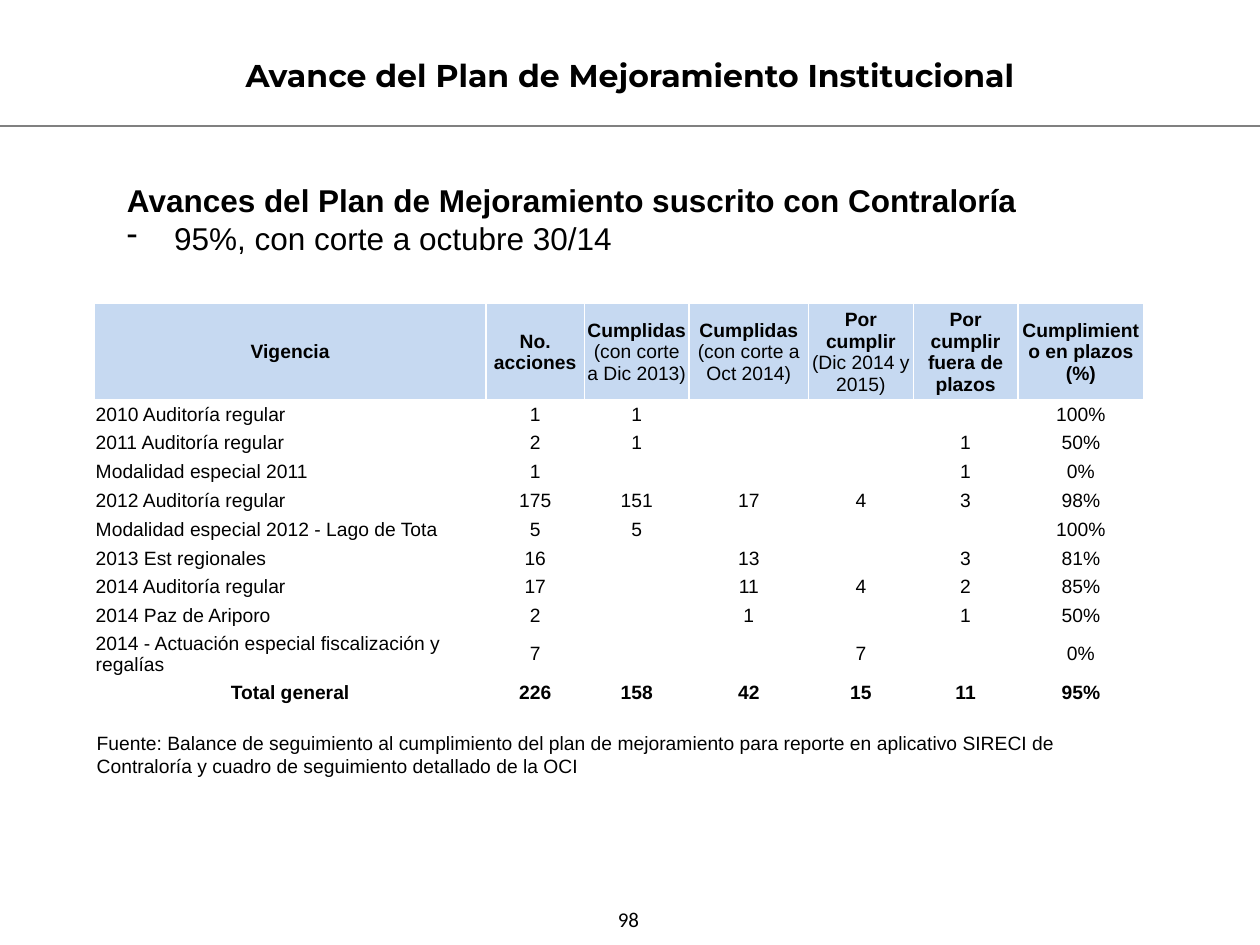
"""Build the slide on the progress of the institutional improvement plan."""
from lxml.etree import SubElement
from pptx import Presentation
from pptx.dml.color import RGBColor
from pptx.enum.shapes import MSO_CONNECTOR
from pptx.enum.text import MSO_ANCHOR as Anchor, PP_ALIGN as Align
from pptx.oxml.ns import qn
from pptx.util import Cm, Pt

BLACK = RGBColor(0x00, 0x00, 0x00)
WHITE = RGBColor(0xFF, 0xFF, 0xFF)
GREY = RGBColor(0x80, 0x80, 0x80)
PALE_BLUE = RGBColor(0xC6, 0xD9, 0xF1)

TITLE = "Avance del Plan de Mejoramiento Institucional"
HEADLINE = "Avances del Plan de Mejoramiento suscrito con Contraloría"
PROGRESS = "95%, con corte a octubre 30/14"
SOURCE = ("Fuente: Balance de seguimiento al cumplimiento del plan de mejoramiento para reporte "
          "en aplicativo SIRECI de Contraloría y cuadro de seguimiento detallado de la OCI")
PAGE_NUMBER = "98"

COLUMNS = [
    ("Vigencia", "", 7.9),
    ("No. acciones", "", 1.98),
    ("Cumplidas ", "(con corte a Dic 2013)", 2.11),
    ("Cumplidas ", "(con corte a Oct 2014)", 2.41),
    ("Por cumplir ", "(Dic 2014 y 2015)", 2.11),
    ("Por cumplir fuera de plazos", "", 2.11),
    ("Cumplimiento en plazos (%)", "", 2.54),
]
AUDITS = [
    ("2010 Auditoría regular", "1", "1", "", "", "", "100%"),
    ("2011 Auditoría regular", "2", "1", "", "", "1", "50%"),
    ("Modalidad especial 2011", "1", "", "", "", "1", "0%"),
    ("2012 Auditoría regular", "175", "151", "17", "4", "3", "98%"),
    ("Modalidad especial 2012 - Lago de Tota", "5", "5", "", "", "", "100%"),
    ("2013 Est regionales", "16", "", "13", "", "3", "81%"),
    ("2014 Auditoría regular", "17", "", "11", "4", "2", "85%"),
    ("2014 Paz de Ariporo", "2", "", "1", "", "1", "50%"),
    ("2014 - Actuación especial fiscalización y regalías", "7", "", "", "7", "", "0%"),
]
TOTAL = ("Total general", "226", "158", "42", "15", "11", "95%")
HEADER_HEIGHT, ROW_HEIGHT = 1.93, 0.58


def write(paragraph, text, *, size=11, font="Arial", bold=False, align=Align.LEFT):
    paragraph.alignment = align
    if not text:
        SubElement(paragraph._p, qn("a:endParaRPr"), sz=str(size * 100))
        return
    run = paragraph.add_run()
    run.text = text
    run.font.size, run.font.name, run.font.bold = Pt(size), font, bold
    run.font.color.rgb = BLACK


def add_frame(slide, left, top, width, height, anchor=Anchor.TOP):
    frame = slide.shapes.add_textbox(Cm(left), Cm(top), Cm(width), Cm(height)).text_frame
    frame.word_wrap = True
    frame.vertical_anchor = anchor
    return frame


def indent(paragraph, margin, bullet=None):
    paragraph.level = 1
    properties = paragraph._p.get_or_add_pPr()
    properties.set("marL", str(Cm(margin)))
    properties.set("indent", str(-Cm(margin)))
    if bullet:
        SubElement(properties, qn("a:buFontTx"))
        SubElement(properties, qn("a:buChar"), char=bullet)


def format_cell(cell, fill=None):
    cell.margin_left = cell.margin_right = cell.margin_top = Cm(0.03)
    cell.margin_bottom = 0
    cell.vertical_anchor = Anchor.MIDDLE
    properties = cell._tc.get_or_add_tcPr()
    for side in ("lnL", "lnR", "lnT", "lnB"):
        border = SubElement(properties, qn(f"a:{side}"), w=str(Pt(1)))
        SubElement(SubElement(border, qn("a:solidFill")), qn("a:srgbClr"), val=str(WHITE))
    if fill is None:
        cell.fill.background()
    else:
        cell.fill.solid()
        cell.fill.fore_color.rgb = fill


def add_audit_table(slide):
    body = AUDITS + [TOTAL]
    heights = [HEADER_HEIGHT] + [ROW_HEIGHT] * len(body)
    widths = [width for _, _, width in COLUMNS]
    table = slide.shapes.add_table(len(heights), len(widths), Cm(1.9), Cm(6.12),
                                   Cm(sum(widths)), Cm(sum(heights))).table
    table.first_row = table.horz_banding = False
    for row, height in zip(table.rows, heights):
        row.height = Cm(height)
    for c, (label, cutoff, width) in enumerate(COLUMNS):
        table.columns[c].width = Cm(width)
        heading = table.cell(0, c)
        format_cell(heading, PALE_BLUE)
        write(heading.text_frame.paragraphs[0], label, bold=True, align=Align.CENTER)
        if cutoff:
            write(heading.text_frame.paragraphs[0], cutoff, align=Align.CENTER)
        for r, audit in enumerate(body, start=1):
            cell = table.cell(r, c)
            is_total = audit is TOTAL
            format_cell(cell)
            write(cell.text_frame.paragraphs[0], audit[c], bold=is_total,
                  align=Align.CENTER if c or is_total else Align.LEFT)


def main():
    deck = Presentation()
    deck.slide_width, deck.slide_height = Cm(25.4), Cm(19.05)
    slide = deck.slides.add_slide(deck.slide_layouts[6])

    rule = slide.shapes.add_connector(MSO_CONNECTOR.STRAIGHT, 0, Cm(2.54), Cm(25.4), Cm(2.54))
    rule.line.color.rgb, rule.line.width = GREY, Pt(0.75)
    SubElement(rule._element.spPr, qn("a:effectLst"))

    page = add_frame(slide, 12.01, 17.96, 1.32, 1.12, Anchor.MIDDLE)
    write(page.paragraphs[0], PAGE_NUMBER, size=12, font="Calibri", align=Align.CENTER)
    title = add_frame(slide, 4.7, 0.61, 16.26, 1.8, Anchor.MIDDLE)
    write(title.paragraphs[0], TITLE, size=18, font="Montserrat", bold=True)

    summary = add_frame(slide, 2.31, 3.53, 21.01, 3)
    indent(summary.paragraphs[0], 0)
    write(summary.paragraphs[0], HEADLINE, size=18, bold=True)
    progress = summary.add_paragraph()
    indent(progress, 0.95, "-")
    write(progress, PROGRESS, size=18)

    write(add_frame(slide, 1.7, 14.61, 21.41, 1.19).paragraphs[0], SOURCE)
    add_audit_table(slide)
    deck.save("out.pptx")


if __name__ == "__main__":
    main()
